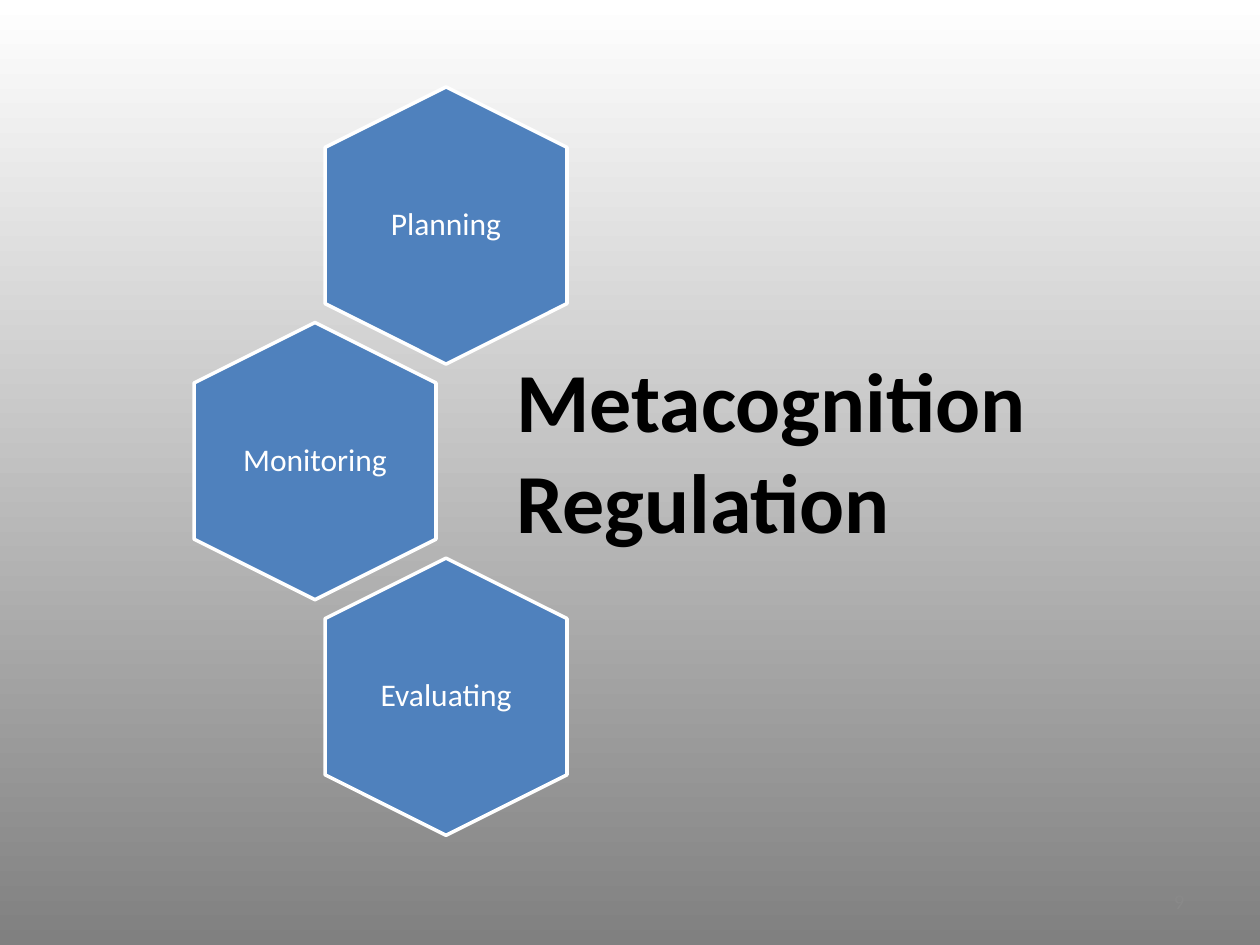
from dataclasses import dataclass

from pptx import Presentation
from pptx.dml.color import RGBColor
from pptx.enum.text import MSO_ANCHOR, PP_ALIGN
from pptx.slide import Slide
from pptx.text.text import TextFrame
from pptx.util import Inches, Pt

CENTER, LEFT, RIGHT = PP_ALIGN.CENTER, PP_ALIGN.LEFT, PP_ALIGN.RIGHT
MIDDLE, TOP = MSO_ANCHOR.MIDDLE, MSO_ANCHOR.TOP

FONT = "Calibri"
COLORS = {
    "gradient_bottom": "808080",
    "gradient_top": "FFFFFF",
    "hexagon": "4F81BD",
    "white": "FFFFFF",
    "title": "000000",
    "number": "898989",
}

HEXAGON_WIDTH, HEXAGON_HEIGHT, HEXAGON_SLOPE = 1.92, 2.2, 0.48
COLUMN_LEFT = {"inner": 2.58, "outer": 1.54}
FIRST_TOP, ROW_STEP = 0.69, 1.87


@dataclass(frozen=True)
class TextStyle:
    size: int
    color: str
    align: PP_ALIGN = LEFT
    bold: bool = False
    line_spacing: float = 1.0


@dataclass(frozen=True)
class Stage:
    label: str
    column: str


STAGES = (
    Stage("Planning", "inner"),
    Stage("Monitoring", "outer"),
    Stage("Evaluating", "inner"),
)
STAGE_STYLE = TextStyle(18, "white", CENTER, line_spacing=0.9)
TITLE_STYLE = TextStyle(48, "title", bold=True)
NUMBER_STYLE = TextStyle(12, "number", RIGHT)


def color(name: str) -> RGBColor:
    return RGBColor.from_string(COLORS[name])


def write_lines(frame: TextFrame, lines: tuple[str, ...], style: TextStyle) -> None:
    """Write one paragraph per line into an empty text frame."""
    frame.word_wrap = True
    for index, line in enumerate(lines):
        paragraph = frame.add_paragraph() if index else frame.paragraphs[0]
        paragraph.alignment = style.align
        paragraph.line_spacing = style.line_spacing
        run = paragraph.add_run()
        run.text = line
        run.font.name = FONT
        run.font.size = Pt(style.size)
        run.font.bold = style.bold
        run.font.color.rgb = color(style.color)


def paint_background(slide: Slide) -> None:
    fill = slide.background.fill
    fill.gradient()
    fill.gradient_angle = 90
    for stop, name in zip(fill.gradient_stops, ("gradient_bottom", "gradient_top")):
        stop.color.rgb = color(name)


def add_hexagon(slide: Slide, stage: Stage, top: float) -> None:
    left = COLUMN_LEFT[stage.column]
    right, bottom = left + HEXAGON_WIDTH, top + HEXAGON_HEIGHT
    middle = left + HEXAGON_WIDTH / 2
    upper, lower = top + HEXAGON_SLOPE, bottom - HEXAGON_SLOPE
    corners = [(right, upper), (right, lower), (middle, bottom),
               (left, lower), (left, upper)]
    builder = slide.shapes.build_freeform(Inches(middle), Inches(top))
    builder.add_line_segments([(Inches(x), Inches(y)) for x, y in corners])
    shape = builder.convert_to_shape()
    shape.shadow.inherit = False
    shape.fill.solid()
    shape.fill.fore_color.rgb = color("hexagon")
    shape.line.color.rgb = color("white")
    shape.line.width = Pt(2)
    frame = shape.text_frame
    frame.vertical_anchor = MIDDLE
    frame.margin_left = frame.margin_right = Inches(0.37)
    frame.margin_top = frame.margin_bottom = Inches(0.42)
    write_lines(frame, (stage.label,), STAGE_STYLE)


def add_text(slide: Slide, box: tuple[float, float, float, float],
             lines: tuple[str, ...], style: TextStyle, anchor: MSO_ANCHOR) -> None:
    shape = slide.shapes.add_textbox(*(Inches(length) for length in box))
    shape.text_frame.vertical_anchor = anchor
    write_lines(shape.text_frame, lines, style)


def main() -> None:
    presentation = Presentation()
    presentation.slide_width, presentation.slide_height = Inches(10), Inches(7.5)
    slide = presentation.slides.add_slide(presentation.slide_layouts[6])
    paint_background(slide)
    for row, stage in enumerate(STAGES):
        add_hexagon(slide, stage, FIRST_TOP + row * ROW_STEP)
    add_text(slide, (4, 2.72, 5.8, 1.72), ("Metacognition", "Regulation"),
             TITLE_STYLE, TOP)
    add_text(slide, (7.17, 6.95, 2.33, 0.4), ("9",), NUMBER_STYLE, MIDDLE)
    presentation.save("out.pptx")


if __name__ == "__main__":
    main()
